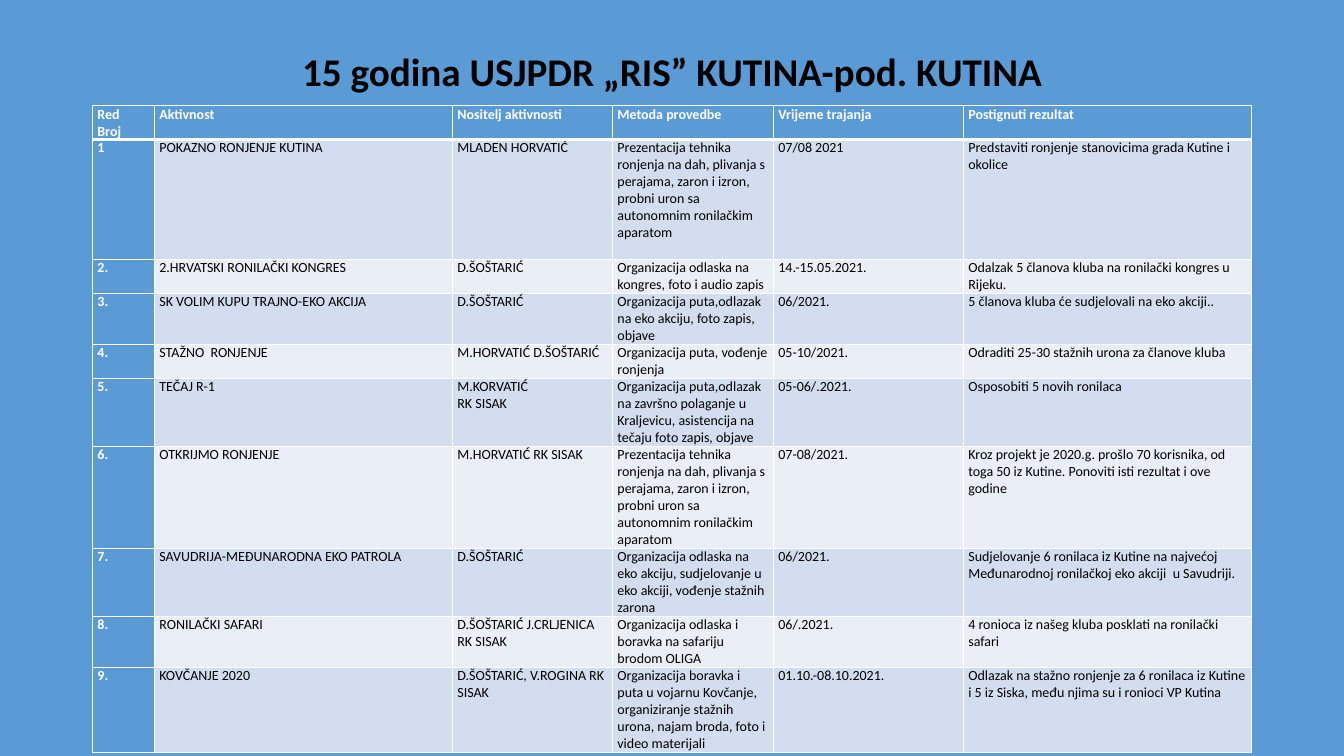
import pptx
import pptx.util
import pptx.dml.color
import pptx.enum.text
import pptx.oxml
import pptx.oxml.ns

Pt = pptx.util.Pt

COLORS = {
    "blue": "5B9BD5",
    "odd": "D2DEEF",
    "even": "EAEFF7",
    "white": "FFFFFF",
    "black": "000000",
}

TITLE = "15 godina USJPDR „RIS” KUTINA-pod. KUTINA"
COLUMN_WIDTHS = [44.3, 212.9, 114.3, 115, 135.7, 205.8]
ROW_HEIGHTS = [23.6, 85.7, 24.3, 36.4, 24.3, 48.6, 72.9, 48.6, 36.4, 60.7]
DIVING_DEMO = (
    "Prezentacija tehnika ronjenja na dah, plivanja s perajama, zaron i izron, "
    "probni uron sa autonomnim ronilačkim aparatom"
)
ACTIVITIES = [
    ["Red\nBroj", "Aktivnost", "Nositelj aktivnosti", "Metoda provedbe",
     "Vrijeme trajanja", "Postignuti rezultat"],
    ["1", "POKAZNO RONJENJE KUTINA", "MLADEN HORVATIĆ", DIVING_DEMO,
     "07/08 2021", "Predstaviti ronjenje stanovicima grada Kutine i okolice"],
    ["2.", "2.HRVATSKI RONILAČKI KONGRES", "D.ŠOŠTARIĆ",
     "Organizacija odlaska na kongres, foto i audio zapis",
     "14.-15.05.2021.", "Odalzak 5 članova kluba na ronilački kongres u Rijeku."],
    ["3.", "SK VOLIM KUPU TRAJNO-EKO AKCIJA", "D.ŠOŠTARIĆ",
     "Organizacija puta,odlazak na eko akciju, foto zapis, objave",
     "06/2021.", "5 članova kluba će sudjelovali na eko akciji.."],
    ["4.", "STAŽNO  RONJENJE", "M.HORVATIĆ D.ŠOŠTARIĆ",
     "Organizacija puta, vođenje ronjenja",
     "05-10/2021.", "Odraditi 25-30 stažnih urona za članove kluba"],
    ["5.", "TEČAJ R-1", "M.KORVATIĆ\nRK SISAK",
     "Organizacija puta,odlazak na završno polaganje u Kraljevicu, "
     "asistencija na tečaju foto zapis, objave",
     "05-06/.2021.", "Osposobiti 5 novih ronilaca"],
    ["6.", "OTKRIJMO RONJENJE", "M.HORVATIĆ RK SISAK", DIVING_DEMO,
     "07-08/2021.",
     "Kroz projekt je 2020.g. prošlo 70 korisnika, od toga 50 iz Kutine. "
     "Ponoviti isti rezultat i ove godine"],
    ["7.", "SAVUDRIJA-MEĐUNARODNA EKO PATROLA", "D.ŠOŠTARIĆ",
     "Organizacija odlaska na eko akciju, sudjelovanje u eko akciji, "
     "vođenje stažnih zarona",
     "06/2021.",
     "Sudjelovanje 6 ronilaca iz Kutine na najvećoj\n"
     "Međunarodnoj ronilačkoj eko akciji  u Savudriji."],
    ["8.", "RONILAČKI SAFARI", "D.ŠOŠTARIĆ J.CRLJENICA RK SISAK",
     "Organizacija odlaska i boravka na safariju brodom OLIGA",
     "06/.2021.", "4 ronioca iz našeg kluba posklati na ronilački safari"],
    ["9.", "KOVČANJE 2020", "D.ŠOŠTARIĆ, V.ROGINA RK SISAK",
     "Organizacija boravka i puta u vojarnu Kovčanje, organiziranje stažnih "
     "urona, najam broda, foto i video materijali",
     "01.10.-08.10.2021.",
     "Odlazak na stažno ronjenje za 6 ronilaca iz Kutine i 5 iz Siska, "
     "među njima su i ronioci VP Kutina"],
]


def assign(target, values):
    for name, value in values.items():
        setattr(target, name, value)


def rgb(color):
    return pptx.dml.color.RGBColor.from_string(COLORS[color])


class SlideBuilder:
    font = "Calibri"
    cell_format = {"margin_left": Pt(3.6), "margin_right": Pt(3.6),
                   "margin_top": 0, "margin_bottom": 0}

    def __init__(self, slide):
        self.slide = slide

    def background(self, color):
        fill = self.slide.background.fill
        fill.solid()
        fill.fore_color.rgb = rgb(color)

    def add_lines(self, frame, text, size, color, bold, **para_format):
        for index, line in enumerate(text.split("\n")):
            para = frame.add_paragraph() if index else frame.paragraphs[0]
            assign(para, para_format)
            span = para.add_run()
            span.text = line
            assign(span.font, {"name": self.font, "size": Pt(size), "bold": bold})
            span.font.color.rgb = rgb(color)

    def title(self, text, left, top, width, height):
        box = self.slide.shapes.add_textbox(Pt(left), Pt(top), Pt(width), Pt(height))
        assign(box.text_frame, {"word_wrap": True,
                                "vertical_anchor": pptx.enum.text.MSO_ANCHOR.MIDDLE})
        self.add_lines(box.text_frame, text, 28, "black", True, line_spacing=0.9,
                       alignment=pptx.enum.text.PP_ALIGN.CENTER)

    def borders(self, cell, widths):
        properties = cell._tc.get_or_add_tcPr()
        for index, (side, width) in enumerate(widths.items()):
            properties.insert(index, pptx.oxml.parse_xml(
                f'<a:{side} {pptx.oxml.ns.nsdecls("a")} w="{Pt(width)}">'
                f'<a:solidFill><a:srgbClr val="{COLORS["white"]}"/></a:solidFill>'
                f'</a:{side}>'))

    def cell(self, cell, text, row, column):
        heading = row == 0 or column == 0
        assign(cell, self.cell_format)
        fill = "blue" if heading else ("odd" if row % 2 else "even")
        cell.fill.solid()
        cell.fill.fore_color.rgb = rgb(fill)
        self.borders(cell, {"lnL": 1, "lnR": 1, "lnT": 3 if row == 1 else 1,
                            "lnB": 3 if row == 0 else 1})
        self.add_lines(cell.text_frame, text, 10, "white" if heading else "black", heading)

    def table(self, rows, left, top, widths, heights):
        table = self.slide.shapes.add_table(
            len(rows), len(widths), Pt(left), Pt(top),
            Pt(sum(widths)), Pt(sum(heights))).table
        assign(table, {"first_row": False, "horz_banding": False})
        for column, width in zip(table.columns, widths):
            column.width = Pt(width)
        for row, height in zip(table.rows, heights):
            row.height = Pt(height)
        for row, texts in enumerate(rows):
            for column, text in enumerate(texts):
                self.cell(table.cell(row, column), text, row, column)


def main():
    deck = pptx.Presentation()
    assign(deck, {"slide_width": Pt(960), "slide_height": Pt(540)})
    page = SlideBuilder(deck.slides.add_slide(deck.slide_layouts[6]))
    page.background("blue")
    page.title(TITLE, 66, 17, 828, 71.5)
    page.table(ACTIVITIES, 66, 75.6, COLUMN_WIDTHS, ROW_HEIGHTS)
    deck.save("out.pptx")


if __name__ == "__main__":
    main()
